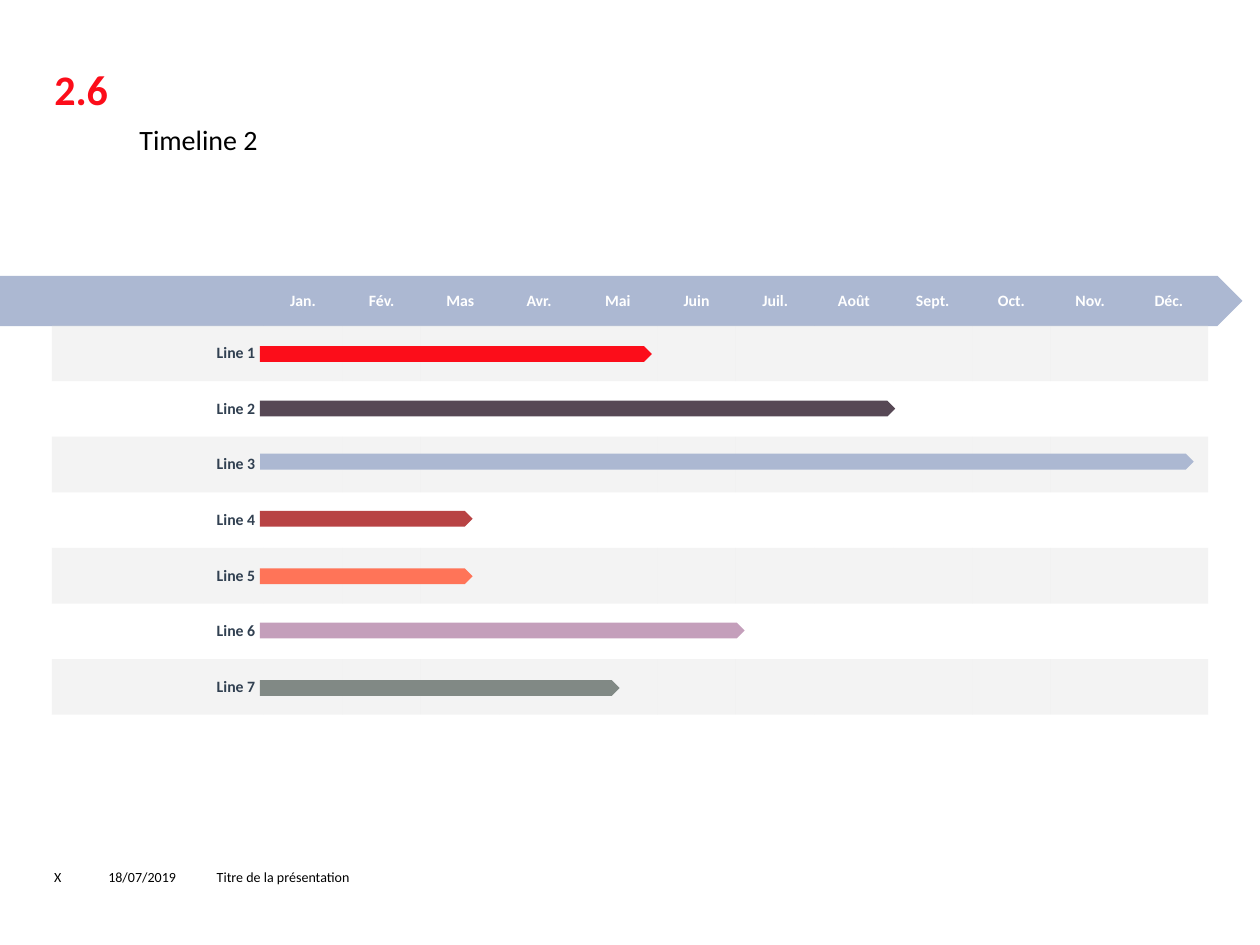
from lxml import etree
from pptx import Presentation
from pptx.dml.color import RGBColor
from pptx.enum.shapes import MSO_SHAPE
from pptx.enum.text import MSO_ANCHOR, MSO_AUTO_SIZE, PP_ALIGN
from pptx.oxml.ns import qn
from pptx.util import Pt

PENTAGON = MSO_SHAPE.PENTAGON
TOP, MIDDLE = MSO_ANCHOR.TOP, MSO_ANCHOR.MIDDLE
LEFT, CENTER, RIGHT = PP_ALIGN.LEFT, PP_ALIGN.CENTER, PP_ALIGN.RIGHT
NO_AUTOFIT = MSO_AUTO_SIZE.NONE

BLACK = RGBColor(0x00, 0x00, 0x00)
WHITE = RGBColor(0xFF, 0xFF, 0xFF)
RED = RGBColor(0xFC, 0x0D, 0x1A)
PLUM = RGBColor(0x57, 0x48, 0x55)
BLUE = RGBColor(0xAC, 0xB8, 0xD2)
BRICK = RGBColor(0xB8, 0x43, 0x44)
CORAL = RGBColor(0xFF, 0x74, 0x58)
MAUVE = RGBColor(0xC4, 0x9F, 0xBB)
SAGE = RGBColor(0x81, 0x89, 0x85)
SLATE = RGBColor(0x31, 0x40, 0x51)
GREY = RGBColor(0xD9, 0xD9, 0xD9)

FONT = "Calibri"
PLAIN_TABLE_STYLE = "{2D5ABB26-0587-4C30-8999-92F81FD0307C}"
MONTHS = ["Jan.", "Fév.", "Mas", "Avr.", "Mai", "Juin",
          "Juil.", "Août", "Sept.", "Oct.", "Nov.", "Déc."]
LINES = [
    ("Line 1", 40.2, 224, RED),
    ("Line 2", 71.4, 363, PLUM),
    ("Line 3", 101.7, 533.5, BLUE),
    ("Line 4", 134.4, 121.5, BRICK),
    ("Line 5", 167.2, 121.5, CORAL),
    ("Line 6", 198.2, 277, MAUVE),
    ("Line 7", 231, 205.5, SAGE),
]
LABEL_WIDTH, MONTH_WIDTH = 121, 45
HEADER_HEIGHT, LINE_HEIGHT = 28.4, 31.8
BAR_HEIGHT = 9


def write_text(frame, text, *, size, color=BLACK, bold=False, align=LEFT, line_spacing=1):
    paragraph = frame.paragraphs[0]
    properties = paragraph._p.get_or_add_pPr()
    properties.set("marL", "0")
    properties.set("indent", "0")
    etree.SubElement(properties, qn("a:buNone"))
    paragraph.alignment = align
    paragraph.line_spacing = line_spacing
    paragraph.space_before = Pt(0)
    run = paragraph.add_run()
    run.text = text
    run.font.name = FONT
    run.font.size = Pt(size)
    run.font.bold = bold
    run.font.color.rgb = color


def place_text(shape, box, text, *, anchor=MIDDLE, margins=(7.2, 3.6, 7.2, 3.6), **text_format):
    shape.left, shape.top, shape.width, shape.height = map(Pt, box)
    frame = shape.text_frame
    frame.word_wrap = True
    frame.auto_size = NO_AUTOFIT
    frame.vertical_anchor = anchor
    (frame.margin_left, frame.margin_top,
     frame.margin_right, frame.margin_bottom) = map(Pt, margins)
    write_text(frame, text, **text_format)


def add_arrow(slide, left, top, width, height, color):
    arrow = slide.shapes.add_shape(PENTAGON, Pt(left), Pt(top), Pt(width), Pt(height))
    arrow.shadow.inherit = False
    arrow.fill.solid()
    arrow.fill.fore_color.rgb = color
    arrow.line.fill.background()


def add_heading(slide, left, top):
    number = slide.placeholders[1]
    place_text(number, (left, top, 47, 29.5), "2.6", anchor=TOP,
               margins=(7.2, 3.6, 0, 3.6), size=24, color=RED, bold=True, line_spacing=0.9)
    place_text(slide.shapes.title, (left + 47.3, top + 30, 582, 27), "Timeline 2",
               margins=(8.6, 3.6, 7.2, 3.6), size=16)


def fill_cell(cell, color, opacity=100):
    cell.fill.solid()
    cell.fill.fore_color.rgb = color
    if opacity < 100:
        color_element = cell._tc.tcPr.find(".//" + qn("a:srgbClr"))
        etree.SubElement(color_element, qn("a:alpha"), val=str(opacity * 1000))


def format_cell(cell, row, column):
    cell.vertical_anchor = MIDDLE
    cell.margin_left = cell.margin_right = Pt(2.4 if row == 0 else 4.8)
    cell.margin_top = cell.margin_bottom = Pt(2.6)
    if row == 0:
        fill_cell(cell, BLUE)
    elif row % 2:
        fill_cell(cell, GREY, opacity=30)
    else:
        cell.fill.background()
    if row == 0 and column > 0:
        write_text(cell.text_frame, MONTHS[column - 1], size=9, color=WHITE,
                   bold=True, align=CENTER)
    elif row > 0 and column == 0:
        write_text(cell.text_frame, LINES[row - 1][0], size=9, color=SLATE,
                   bold=True, align=RIGHT)


def add_timeline_table(slide, left, top):
    row_count, column_count = len(LINES) + 1, len(MONTHS) + 1
    graphic_frame = slide.shapes.add_table(
        row_count, column_count, Pt(left), Pt(top),
        Pt(LABEL_WIDTH + MONTH_WIDTH * len(MONTHS)),
        Pt(HEADER_HEIGHT + LINE_HEIGHT * len(LINES)))
    table = graphic_frame.table
    table.first_row = table.horz_banding = False
    next(graphic_frame.element.iter(qn("a:tableStyleId"))).text = PLAIN_TABLE_STYLE
    for column in range(column_count):
        table.columns[column].width = Pt(MONTH_WIDTH if column else LABEL_WIDTH)
    for row in range(row_count):
        table.rows[row].height = Pt(LINE_HEIGHT if row else HEADER_HEIGHT)
        for column in range(column_count):
            format_cell(table.cell(row, column), row, column)


def add_timeline(slide, left, top, width):
    table_left = left + 29.6
    add_arrow(slide, left, top, width, 28.8, BLUE)
    add_timeline_table(slide, table_left, top)
    for _, offset, length, color in LINES:
        add_arrow(slide, table_left + 119, top + offset, length, BAR_HEIGHT, color)


def add_footer(slide, left, top, height):
    for text, offset, width in [("X", 0, 31), ("18/07/2019", 31, 62.5),
                                ("Titre de la présentation", 93, 579)]:
        box = (left + offset, top, width, height)
        shape = slide.shapes.add_textbox(*map(Pt, box))
        place_text(shape, box, text, size=8)


def main():
    presentation = Presentation()
    presentation.slide_width, presentation.slide_height = Pt(720), Pt(540)
    slide = presentation.slides.add_slide(presentation.slide_layouts[1])
    add_heading(slide, 23.8, 36)
    add_timeline(slide, 0, 157.6, 710)
    add_footer(slide, 23.8, 487, 28.8)
    presentation.save("out.pptx")


if __name__ == "__main__":
    main()
